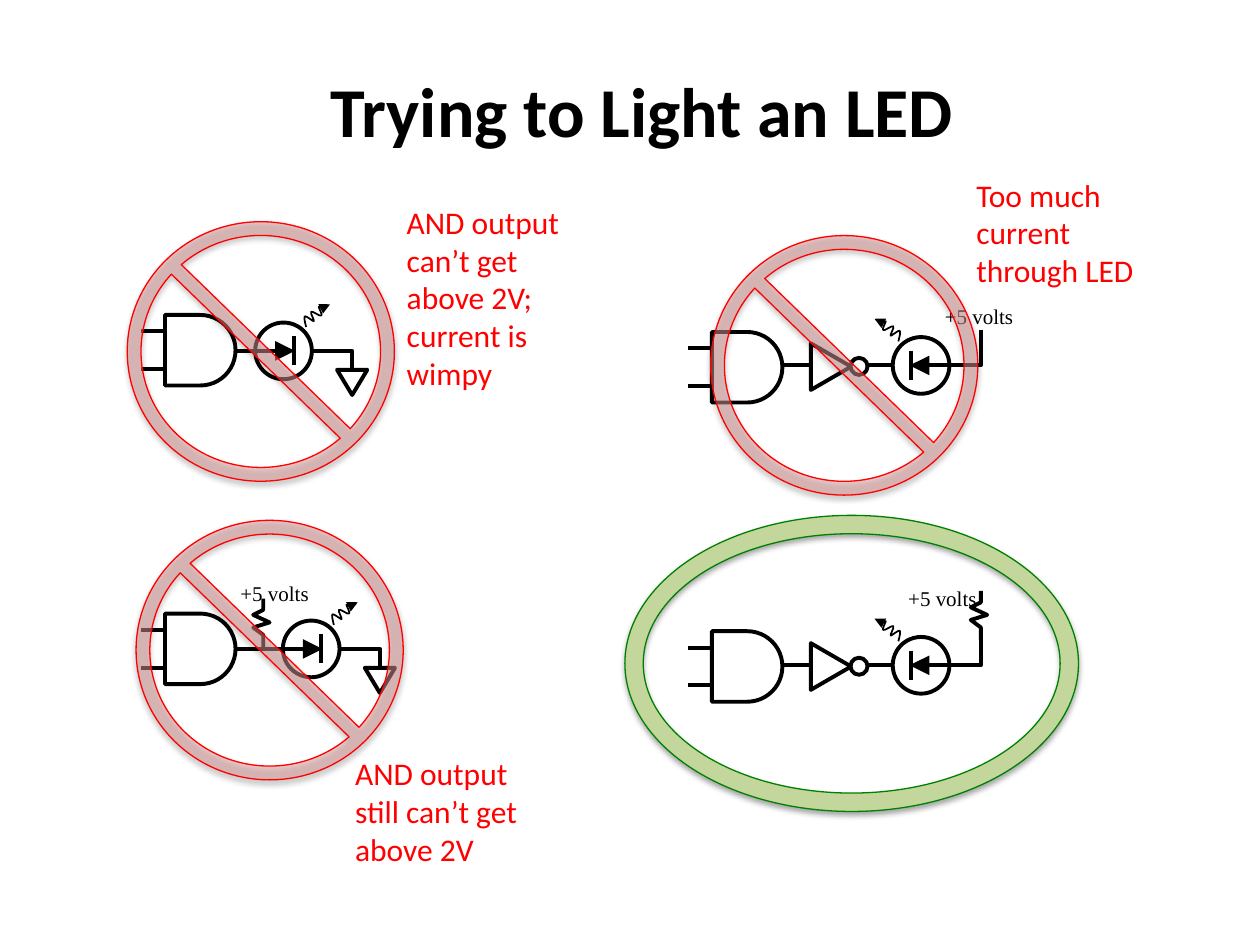
"""Builds a slide comparing four ways to light an LED from a logic gate."""
from dataclasses import dataclass

from lxml import etree
from pptx import Presentation
from pptx import util as u
from pptx.dml import color
from pptx.enum import shapes, text
from pptx.oxml import ns

COLUMNS, ROWS = 100, 75
CELL = u.Inches(10) // COLUMNS
COLORS = {"ink": "000000", "paper": "FFFFFF", "red": "FF0000", "pink": "D99694",
          "green": "008000", "lime": "C3D69B"}
KIND = shapes.MSO_SHAPE
HEAVY, THIN, HAIR = 2.25, 1, 0.75
SQUIGGLE = [(1.8, -1.9), (1.7, -2.3), (1.6, -2.7), (1.7, -2.75), (1.8, -2.8), (2.4, -2.3),
            (2.4, -2.35), (2.5, -2.4), (2.1, -3.0), (2.2, -3.1), (2.3, -3.2), (2.9, -2.7),
            (3.0, -2.8), (3.15, -2.8), (2.8, -3.4), (2.8, -3.5), (2.9, -3.5), (3.2, -3.3),
            (3.3, -3.3), (3.5, -3.4), (3.6, -3.5), (3.7, -3.7)]
ZIGZAG = [(0, 0), (0, -1), (-0.8, -1.6), (0.5, -2), (-0.8, -2.6), (0, -3), (0, -3.9)]


@dataclass(frozen=True)
class Circuit:
    row: float
    gate: tuple
    wire: tuple
    led: float
    facing: int
    label: tuple
    resistor: tuple = ()


@dataclass(frozen=True)
class Verdict:
    sign: tuple
    note: tuple
    lines: tuple


CIRCUITS = [
    Circuit(27.85, (13.1, 27.8), (18.8, 26), 22.5, 1, ()),
    Circuit(51.5, (13.1, 51.5), (18.7, 28.2), 24.7, 1, (18.1, 45.6), (20.9, 51.4)),
    Circuit(29, (56.5, 29.15), (61.4, 77.3), 73.1, -1, (74, 23.6)),
    Circuit(52.8, (56.5, 52.9), (61.4, 77.3), 73.1, -1, (71.1, 46), (77.85, 50.8)),
]
VERDICTS = [
    Verdict((10.1, 17.6), (31.3, 15.6, 15.3, 16.2),
            ("AND output can’t get above 2V;", "current is wimpy")),
    Verdict((10.8, 41.3), (27.2, 59.35, 15.3, 10.1), ("AND output still can’t get above 2V",)),
    Verdict((56.4, 18.7), (76.5, 13.45, 16.2, 10.1), ("Too much current through LED",)),
]


def grid(*cells: float) -> list:
    return [u.Emu(round(cell * CELL)) for cell in cells]


def rgb(name: str) -> color.RGBColor:
    return color.RGBColor.from_string(COLORS[name])


def stroke(item, name: str, width: float) -> None:
    item.line.color.rgb = rgb(name)
    item.line.width = u.Pt(width)


def add_arrowhead(item, end: str, size: str) -> None:
    outline = item._element.spPr.find(ns.qn("a:ln"))
    etree.SubElement(outline, ns.qn(f"a:{end}"), type="triangle", w=size, len=size)


def add_wire(page, start: tuple, stop: tuple):
    wire = page.shapes.add_connector(shapes.MSO_CONNECTOR.STRAIGHT, *grid(*start, *stop))
    stroke(wire, "ink", HEAVY)
    etree.SubElement(wire._element.spPr, ns.qn("a:effectLst"))
    return wire


def add_path(page, points: list, width: float = HEAVY):
    start, *rest = [tuple(grid(*point)) for point in points]
    builder = page.shapes.build_freeform(*start)
    builder.add_line_segments(rest, close=False)
    path = builder.convert_to_shape()
    path.fill.background()
    path.shadow.inherit = False
    stroke(path, "ink", width)
    return path


def bend(path) -> None:
    """Turns each three straight segments of a path into one cubic curve."""
    segments = list(path._element.iter(ns.qn("a:lnTo")))
    for first in range(0, len(segments), 3):
        trio = segments[first:first + 3]
        curve = etree.Element(ns.qn("a:cubicBezTo"))
        trio[0].addprevious(curve)
        for segment in trio:
            curve.append(segment[0])
            segment.getparent().remove(segment)


def add_part(page, kind, box: tuple, turn: int = 0, fill: str = "paper",
             line: str = "ink", width: float = HEAVY):
    part = page.shapes.add_shape(kind, *grid(*box))
    part.rotation = turn
    part.fill.solid()
    part.fill.fore_color.rgb = rgb(fill)
    part.shadow.inherit = False
    stroke(part, line, width)
    return part


def add_ring(page, kind, box: tuple, thickness: float, fill: str, line: str):
    ring = add_part(page, kind, box, fill=fill, line=line, width=HAIR)
    ring.adjustments[0] = thickness
    effects = ring._element.spPr.find(ns.qn("a:effectLst"))
    shadow = etree.SubElement(effects, ns.qn("a:outerShdw"), blurRad="40000", dist="23000",
                              dir="5400000", rotWithShape="0")
    tint = etree.SubElement(shadow, ns.qn("a:srgbClr"), val=COLORS["ink"])
    etree.SubElement(tint, ns.qn("a:alpha"), val="35000")
    return ring


def add_text(page, box: tuple, lines: tuple, size: int, font: str = "Calibri",
             ink: str = "ink", bold: bool = False, align=text.PP_ALIGN.LEFT) -> None:
    frame = page.shapes.add_textbox(*grid(*box)).text_frame
    frame.word_wrap = True
    for index, line in enumerate(lines):
        para = frame.add_paragraph() if index else frame.paragraphs[0]
        para.alignment = align
        span = para.add_run()
        span.text = line
        span.font.name, span.font.size, span.font.bold = font, u.Pt(size), bold
        span.font.color.rgb = rgb(ink)


def add_led(page, x: float, y: float, facing: int) -> None:
    ray = add_path(page, [(x + facing * dx, y + dy) for dx, dy in SQUIGGLE], THIN)
    bend(ray)
    add_arrowhead(ray, "tailEnd", "med")
    add_part(page, KIND.OVAL, (x - 2.25, y - 2.25, 4.5, 4.5))
    diode = add_wire(page, (x + facing * 0.9, y), (x - facing * 2.25, y))
    add_arrowhead(diode, "headEnd", "lg")
    add_wire(page, (x + facing * 0.8, y - 1.15), (x + facing * 0.8, y + 1.15))


def add_gate(page, x: float, y: float) -> None:
    add_part(page, KIND.FLOWCHART_DELAY, (x, y - 2.8, 5.6, 5.6))
    for offset in (-1.5, 1.5):
        add_wire(page, (x, y + offset), (x - 1.9, y + offset))


def add_ground(page, x: float, y: float) -> None:
    add_path(page, [(x + 2.5, y), (x + 5.45, y), (x + 5.45, y + 2.3)])
    add_part(page, KIND.ISOSCELES_TRIANGLE, (x + 4.25, y + 1.5, 2.4, 2), 180)


def add_inverter_and_supply(page, y: float) -> None:
    add_path(page, [(76.7, y), (77.85, y), (77.85, y - 2.8)])
    add_part(page, KIND.ISOSCELES_TRIANGLE, (64.1, y - 1.5, 3.7, 3.2), 90)
    add_part(page, KIND.OVAL, (67.5, y - 0.6, 1.35, 1.35), 90)


def add_circuit(page, circuit: Circuit) -> None:
    y = circuit.row
    add_wire(page, (circuit.wire[1], y), (circuit.wire[0], y))
    add_led(page, circuit.led, y, circuit.facing)
    add_gate(page, *circuit.gate)
    if circuit.resistor:
        x, foot = circuit.resistor
        add_path(page, [(x + dx, foot + dy) for dx, dy in ZIGZAG])
    if circuit.label:
        add_text(page, (*circuit.label, 7.8, 2.7), ("+5 volts",), 12, "Times New Roman")
    if circuit.facing > 0:
        add_ground(page, circuit.led, y)
    else:
        add_inverter_and_supply(page, y)


def add_verdict(page, verdict: Verdict) -> None:
    sign = add_ring(page, KIND.NO_SYMBOL, (*verdict.sign, 21.2, 20.6), 0.053, "pink", "red")
    tint = sign._element.spPr.find(ns.qn("a:solidFill"))[0]
    etree.SubElement(tint, ns.qn("a:alpha"), val="50000")
    add_text(page, verdict.note, verdict.lines, 18, ink="red")


def main() -> None:
    deck = Presentation()
    deck.slide_width, deck.slide_height = grid(COLUMNS, ROWS)
    page = deck.slides.add_slide(deck.slide_layouts[6])
    add_text(page, (13.9, 4.85, 74.1, 7.7), ("Trying to Light an LED",), 40, bold=True,
             align=text.PP_ALIGN.CENTER)
    for circuit in CIRCUITS:
        add_circuit(page, circuit)
    add_ring(page, KIND.DONUT, (49.6, 40.9, 36, 23.5), 0.062, "lime", "green")
    for verdict in VERDICTS:
        add_verdict(page, verdict)
    deck.save("out.pptx")


if __name__ == "__main__":
    main()
